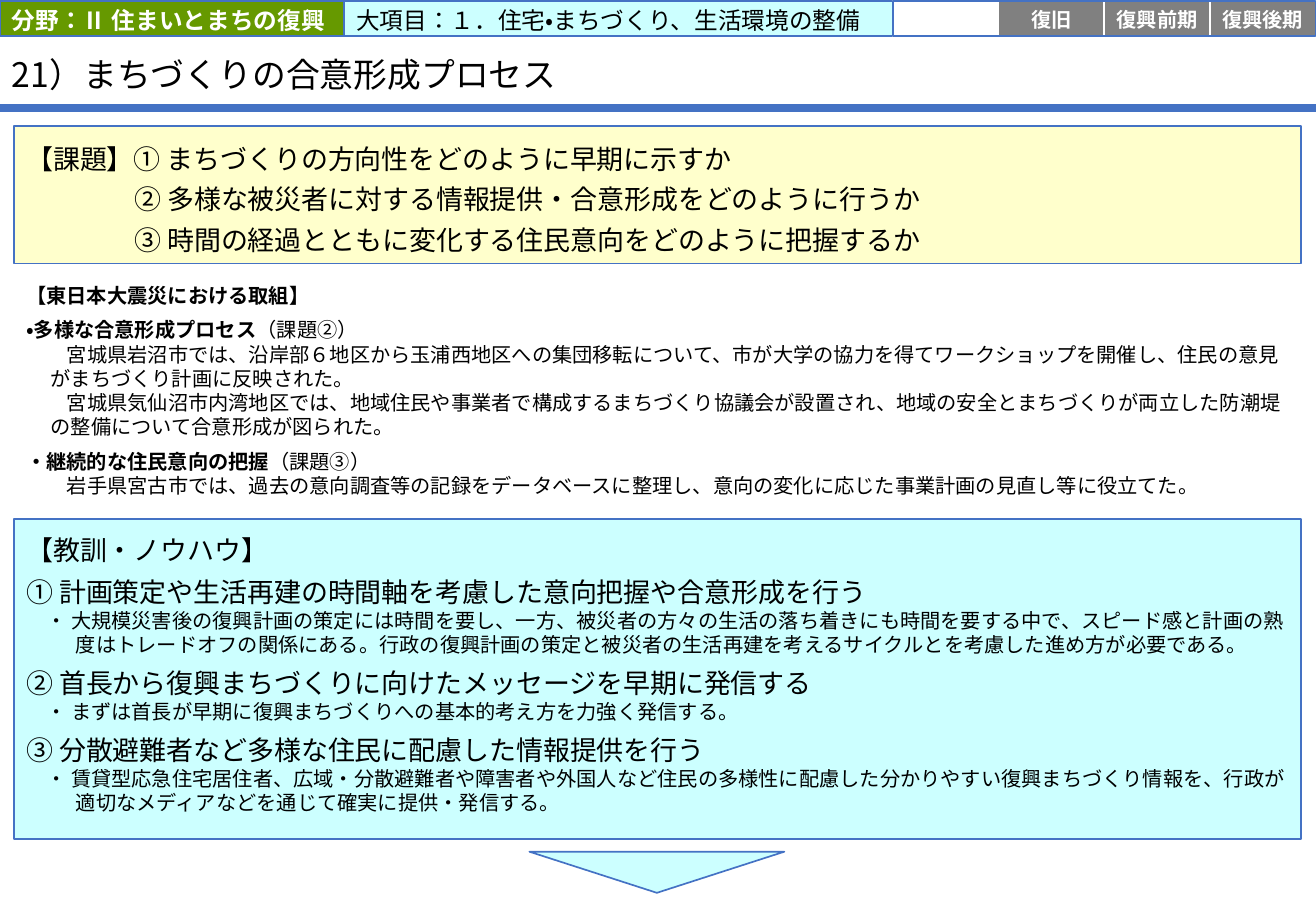
"""Build a slide on consensus building in town reconstruction."""
from lxml.etree import SubElement
from pptx import Presentation
from pptx.dml.color import RGBColor
from pptx.enum.lang import MSO_LANGUAGE_ID as Language
from pptx.enum.shapes import MSO_CONNECTOR as Connector, MSO_SHAPE as Shape
from pptx.enum.text import MSO_ANCHOR as Anchor, PP_ALIGN as Align
from pptx.oxml.ns import qn
from pptx.util import Cm, Pt

COLORS = {"blue": "4472C4", "white": "FFFFFF", "black": "000000", "green": "669900",
          "cyan": "CCFFFF", "yellow": "FFFFCC", "gray": "808080"}
LATIN, GOTHIC = "Calibri", "Noto Sans CJK JP"
PAGE_HEIGHT = 19.05
PAGE_WIDTH = PAGE_HEIGHT * 13 / 9
MARGIN, WIDE = 0.3, 26.9
HEAD_TOP, HEAD_HEIGHT = 0.02, 0.74
HEAD_INSETS = (0.25, 0.05, 0.25, 0)


class Sheet:
    """Holds the colours and the current slide, and draws its elements."""

    def __init__(self, deck, colors):
        self.slide = deck.slides.add_slide(deck.slide_layouts[6])
        self.colors = colors

    def color(self, name):
        return RGBColor.from_string(self.colors[name])

    def box(self, place, fill=None, line=None, kind=Shape.RECTANGLE):
        shape = self.slide.shapes.add_shape(kind, *map(Cm, place))
        shape.shadow.inherit = False
        if fill:
            shape.fill.solid()
            shape.fill.fore_color.rgb = self.color(fill)
        else:
            shape.fill.background()
        if line:
            shape.line.color.rgb = self.color(line)
            shape.line.width = Pt(1)
        else:
            shape.line.fill.background()
        return shape

    def textbox(self, place):
        return self.slide.shapes.add_textbox(*map(Cm, place))

    def rule(self, top, width, color, weight):
        line = self.slide.shapes.add_connector(
            Connector.STRAIGHT, 0, Cm(top), Cm(width), Cm(top))
        line.line.color.rgb = self.color(color)
        line.line.width = Pt(weight)
        SubElement(line._element.spPr, qn("a:effectLst"))

    def frame(self, shape, insets=(0.25, 0.13, 0.25, 0.13), anchor=Anchor.MIDDLE):
        frame = shape.text_frame
        frame.word_wrap = True
        frame.vertical_anchor = anchor
        (frame.margin_left, frame.margin_top,
         frame.margin_right, frame.margin_bottom) = map(Cm, insets)
        return frame

    def paragraph(self, frame, runs, size, font=GOTHIC, color="black", before=0,
                  left=0, first=0, spacing=None, align=Align.LEFT):
        used = frame.paragraphs[0].runs
        para = frame.add_paragraph() if used else frame.paragraphs[0]
        para.alignment = align
        para.space_before = Pt(before)
        if spacing:
            para.line_spacing = spacing
        props = para._p.get_or_add_pPr()
        props.set("marL", str(Cm(left)))
        props.set("indent", str(Cm(first)))
        for text, bold in runs:
            run = para.add_run()
            run.text = text
            run.font.size = Pt(size)
            run.font.bold = bold
            run.font.name = font
            run.font.language_id = Language.JAPANESE
            run.font.color.rgb = self.color(color)
            if font == GOTHIC:
                SubElement(run._r.get_or_add_rPr(), qn("a:ea")).set("typeface", font)


def draw_header(sheet):
    sheet.rule(2.26, PAGE_WIDTH, "blue", 4.5)
    title = sheet.frame(sheet.textbox((0, 0.81, 24.08, 1.47)), (0.25, 0.1, 0.25, 0))
    sheet.paragraph(title, [("21）まちづくりの合意形成プロセス", False)], 20, spacing=0.9)
    labels = [
        (0, 7.2, "green", "white", "分野：Ⅱ 住まいとまちの復興", True),
        (7.2, 11.5, "cyan", "black", "大項目：１．住宅・まちづくり、生活環境の整備", False),
    ]
    for left, width, fill, color, text, bold in labels:
        label = sheet.box((left, HEAD_TOP, width, HEAD_HEIGHT), fill, "blue")
        sheet.paragraph(sheet.frame(label, HEAD_INSETS), [(text, bold)], 14, LATIN, color)


def draw_phases(sheet):
    start, step = 18.67, 2.21
    for column, phase in enumerate(["", "復旧", "復興前期", "復興後期"]):
        cell = sheet.box((start + column * step, HEAD_TOP, step, HEAD_HEIGHT),
                         "gray" if phase else "white", "white")
        if phase:
            sheet.paragraph(sheet.frame(cell, (0, 0.05, 0, 0)), [(phase, True)], 12,
                            LATIN, "white", align=Align.CENTER)
    sheet.box((start, HEAD_TOP, 4 * step, HEAD_HEIGHT), line="blue")


def draw_issues(sheet):
    issues = sheet.frame(sheet.box((MARGIN, 2.64, WIDE, 2.87), "yellow", "blue"),
                         (0.25, 0.3, 0.25, 0.3))
    lines = [
        (0, "【課題】① まちづくりの方向性をどのように早期に示すか"),
        (2.26, "② 多様な被災者に対する情報提供・合意形成をどのように行うか"),
        (2.26, "③ 時間の経過とともに変化する住民意向をどのように把握するか"),
    ]
    for left, text in lines:
        sheet.paragraph(issues, [(text, False)], 16, left=left, spacing=Pt(24))


def draw_efforts(sheet):
    efforts = sheet.frame(sheet.box((MARGIN, 5.69, WIDE, 4.95), "white"))
    sheet.paragraph(efforts, [("【東日本大震災における取組】", True)], 12, LATIN)
    topics = [
        ("・多様な合意形成プロセス", "（課題②）", [
            "宮城県岩沼市では、沿岸部６地区から玉浦西地区への集団移転について、市が大学の協力を得て"
            "ワークショップを開催し、住民の意見がまちづくり計画に反映された。",
            "宮城県気仙沼市内湾地区では、地域住民や事業者で構成するまちづくり協議会が設置され、"
            "地域の安全とまちづくりが両立した防潮堤の整備について合意形成が図られた。"]),
        ("・継続的な住民意向の把握", "（課題③）", [
            "岩手県宮古市では、過去の意向調査等の記録をデータベースに整理し、"
            "意向の変化に応じた事業計画の見直し等に役立てた。"]),
    ]
    for heading, issue, cases in topics:
        sheet.paragraph(efforts, [(heading, True), (issue, False)], 12, LATIN, before=6)
        for case in cases:
            sheet.paragraph(efforts, [(case, False)], 12, left=0.51, first=0.34)


def draw_lessons(sheet):
    lessons = sheet.frame(sheet.box((MARGIN, 10.85, WIDE, 6.7), "cyan", "blue"),
                          (0.25, 0.3, 0.25, 0), Anchor.TOP)
    sheet.paragraph(lessons, [("【教訓・ノウハウ】", False)], 16)
    advice = [
        ("① 計画策定や生活再建の時間軸を考慮した意向把握や合意形成を行う",
         "・ 大規模災害後の復興計画の策定には時間を要し、一方、被災者の方々の生活の落ち着きにも"
         "時間を要する中で、スピード感と計画の熟度はトレードオフの関係にある。"
         "行政の復興計画の策定と被災者の生活再建を考えるサイクルとを考慮した進め方が必要である。"),
        ("② 首長から復興まちづくりに向けたメッセージを早期に発信する",
         "・ まずは首長が早期に復興まちづくりへの基本的考え方を力強く発信する。"),
        ("③ 分散避難者など多様な住民に配慮した情報提供を行う",
         "・ 賃貸型応急住宅居住者、広域・分散避難者や障害者や外国人など住民の多様性に配慮した"
         "分かりやすい復興まちづくり情報を、行政が適切なメディアなどを通じて確実に提供・発信する。"),
    ]
    for heading, detail in advice:
        sheet.paragraph(lessons, [(heading, False)], 16, before=6)
        sheet.paragraph(lessons, [(detail, False)], 12, left=1.04, first=-0.62)
    arrow = sheet.box((11.07, 17.81, 5.33, 0.86), "cyan", "blue", Shape.ISOSCELES_TRIANGLE)
    arrow.rotation = 180


def main():
    deck = Presentation()
    deck.slide_width, deck.slide_height = Cm(PAGE_WIDTH), Cm(PAGE_HEIGHT)
    sheet = Sheet(deck, COLORS)
    for draw in (draw_header, draw_phases, draw_issues, draw_efforts, draw_lessons):
        draw(sheet)
    deck.save("out.pptx")


if __name__ == "__main__":
    main()
